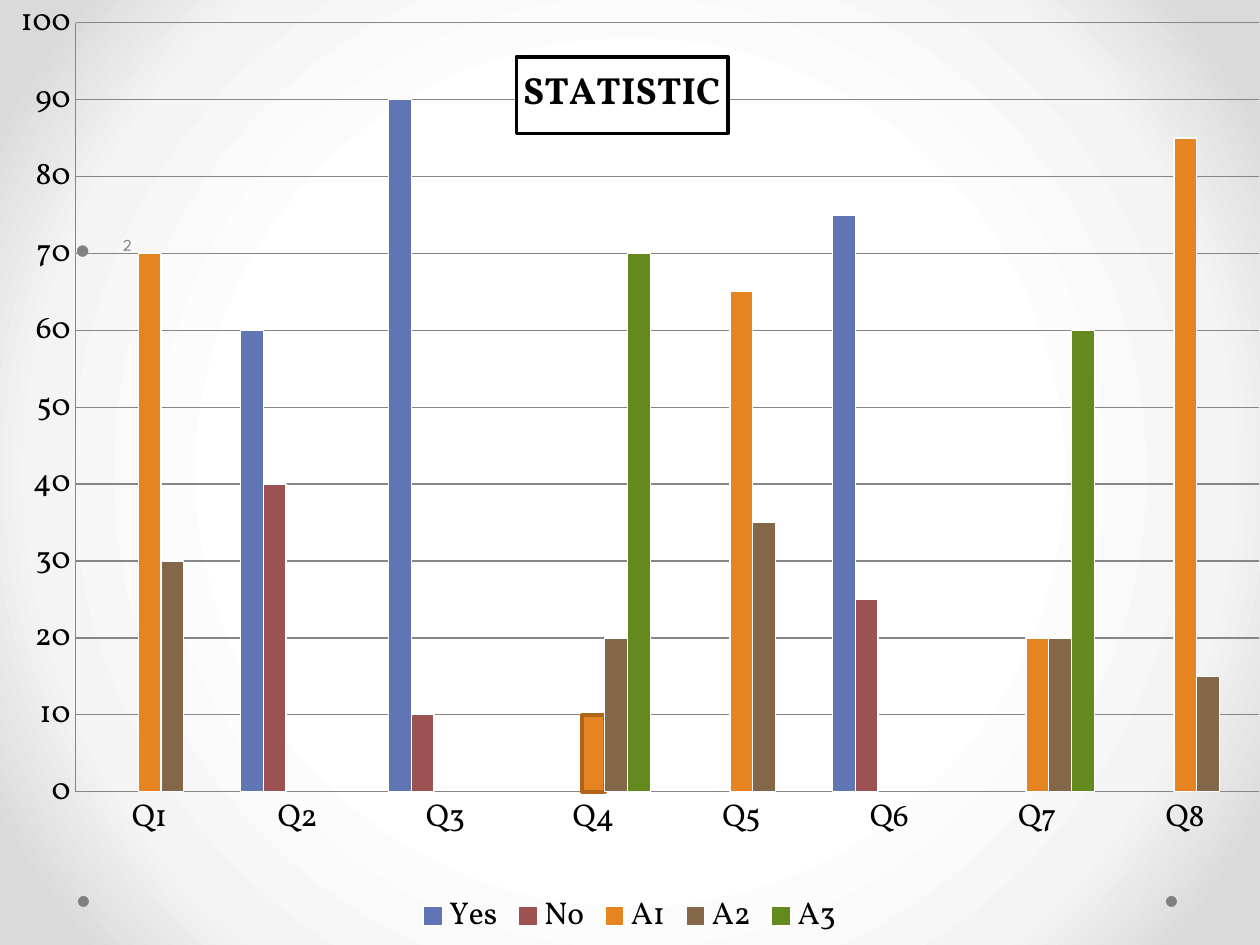
from lxml import etree
from pptx import Presentation
from pptx.chart.data import CategoryChartData
from pptx.dml.color import RGBColor
from pptx.enum.chart import XL_CHART_TYPE as ChartType, XL_LEGEND_POSITION as LegendPos
from pptx.enum.chart import XL_TICK_MARK as Tick
from pptx.enum.shapes import MSO_SHAPE as Shape
from pptx.oxml import parse_xml
from pptx.oxml.ns import nsdecls, qn
from pptx.util import Emu, Pt

PX = 914400 // 126
WIDTH, HEIGHT = 1260, 945
COLORS = {
    "text": "000000", "paper": "FFFFFF", "muted": "808080", "grid": "868686",
    "Yes": "6076B4", "No": "9C5252", "A1": "E68422", "A2": "846648", "A3": "63891F",
    "highlight": "B0641A",
}
BACKDROP = [(50, "FFFFFF"), (76, "F4F4F4"), (92, "DADADA")]

QUESTIONS = [f"Q{n}" for n in range(1, 9)]
ANSWERS = {
    "Yes": [None, 60, 90, None, None, 75, None, None],
    "No": [None, 40, 10, None, None, 25, None, None],
    "A1": [70, None, None, 10, 65, None, 20, 85],
    "A2": [30, None, None, 20, 35, None, 20, 15],
    "A3": [None, None, None, 70, None, None, 60, None],
}
TITLE = "STATISTIC"
NOTE = "²"
DOT_LEFTS, DOT_TOP, DOT_SIZE = (78, 1166), 896, 11


def px(*lengths):
    return [Emu(length * PX) for length in lengths]


def rgb(name):
    return RGBColor.from_string(COLORS[name])


def style_line(line, color, width):
    line.color.rgb = rgb(color)
    line.width = Pt(width)


def style_font(font, size, color, name):
    font.size, font.name = Pt(size), name
    font.color.rgb = rgb(color)


def set_layout(parent, index, **values):
    """Give a chart part a manual layout, as fractions of the chart."""
    for old in parent.findall(qn("c:layout")):
        parent.remove(old)
    layout = etree.Element(qn("c:layout"))
    manual = etree.SubElement(layout, qn("c:manualLayout"))
    for tag, value in values.items():
        etree.SubElement(manual, qn(f"c:{tag}")).set("val", str(value))
    parent.insert(index, layout)


def paint_backdrop(slide):
    stops = "".join(
        f'<a:gs pos="{pos * 1000}"><a:srgbClr val="{color}"/></a:gs>' for pos, color in BACKDROP)
    slide.element.cSld.insert(0, parse_xml(
        f'<p:bg {nsdecls("p", "a")}><p:bgPr><a:gradFill rotWithShape="1"><a:gsLst>{stops}</a:gsLst>'
        '<a:path path="circle"><a:fillToRect l="50000" t="50000" r="50000" b="50000"/></a:path>'
        '</a:gradFill><a:effectLst/></p:bgPr></p:bg>'))


def add_dots(slide):
    for left in DOT_LEFTS:
        dot = slide.shapes.add_shape(Shape.OVAL, *px(left, DOT_TOP, DOT_SIZE, DOT_SIZE))
        dot.shadow.inherit = False
        dot.fill.solid()
        dot.fill.fore_color.rgb = rgb("muted")
        dot.line.fill.background()


def add_note(slide):
    frame = slide.shapes.add_textbox(*px(63, 220, 1134, 624)).text_frame
    frame.word_wrap = True
    paragraph = frame.paragraphs[0]
    paragraph.space_before = Pt(4.8)
    run = paragraph.add_run()
    run.text = NOTE
    style_font(run.font, 24, "muted", "League Spartan")
    indent = 47 * PX
    props = paragraph._p.get_or_add_pPr()
    props.set("marL", str(indent))
    props.set("indent", str(-indent))
    etree.SubElement(props, qn("a:buFont")).set("typeface", "Arial")
    etree.SubElement(props, qn("a:buChar")).set("char", "•")


def style_title(chart):
    title = chart.chart_title
    run = title.text_frame.paragraphs[0].add_run()
    run.text = TITLE
    style_font(run.font, 21.6, "text", "Vollkorn")
    run.font.bold = True
    title.format.fill.solid()
    title.format.fill.fore_color.rgb = rgb("paper")
    style_line(title.format.line, "text", 2)
    set_layout(title._element, 1, xMode="edge", yMode="edge", x=0.41, y=0.06)
    title.include_in_layout = True
    title._element.find(qn("c:overlay")).set("val", "1")


def style_axes(chart):
    for axis in (chart.category_axis, chart.value_axis):
        axis.major_tick_mark = axis.minor_tick_mark = Tick.NONE
        style_line(axis.format.line, "grid", 0.75)
    values = chart.value_axis
    values.minimum_scale, values.maximum_scale, values.major_unit = 0, 100, 10
    values.has_major_gridlines = True
    style_line(values.major_gridlines.format.line, "grid", 0.75)


def style_bars(plot):
    plot.gap_width, plot.overlap, plot.vary_by_categories = 150, 0, False
    for series in plot.series:
        series.invert_if_negative = False
        series.format.fill.solid()
        series.format.fill.fore_color.rgb = rgb(series.name)
        if series.name == "A1":
            marked = series.points[QUESTIONS.index("Q4")].format
            marked.fill.solid()
            marked.fill.fore_color.rgb = rgb("A1")
            style_line(marked.line, "highlight", 2)
        style_line(series.format.line, "paper", 0.75)


def add_answer_chart(slide):
    data = CategoryChartData()
    data.categories = QUESTIONS
    for answer, shares in ANSWERS.items():
        data.add_series(answer, shares)
    chart = slide.shapes.add_chart(
        ChartType.COLUMN_CLUSTERED, *px(0, 0, WIDTH, HEIGHT), data).chart
    style_font(chart.font, 18, "text", "Vollkorn")
    chart.has_title = chart.has_legend = True
    chart.legend.position = LegendPos.BOTTOM
    chart.legend.include_in_layout = False
    style_title(chart)
    style_axes(chart)
    style_bars(chart.plots[0])
    plot_area = chart._chartSpace.chart.plotArea
    set_layout(plot_area, 0, layoutTarget="inner", xMode="edge", yMode="edge",
               x=0.06, y=0.024, w=0.94, h=0.814)


def main():
    deck = Presentation()
    deck.slide_width, deck.slide_height = px(WIDTH, HEIGHT)
    slide = deck.slides.add_slide(deck.slide_layouts[6])
    paint_backdrop(slide)
    add_dots(slide)
    add_note(slide)
    add_answer_chart(slide)
    deck.save("out.pptx")


if __name__ == "__main__":
    main()
